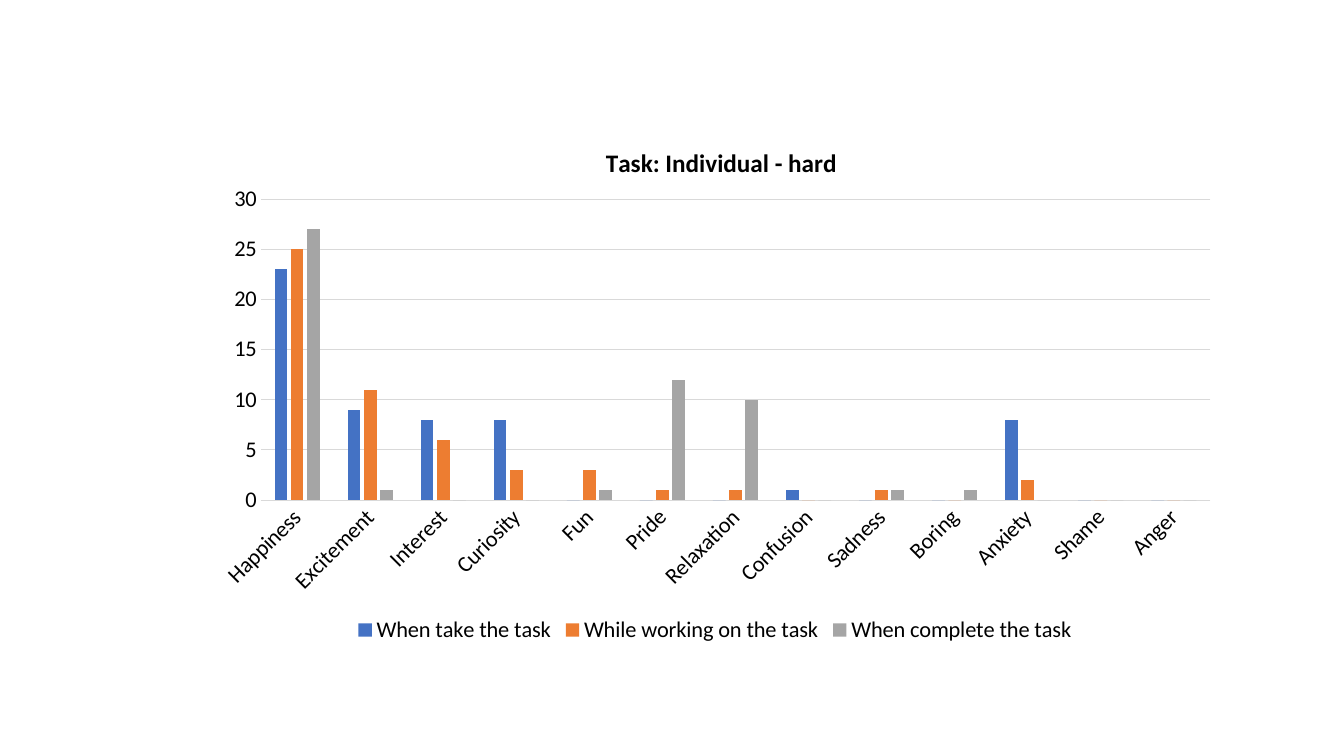
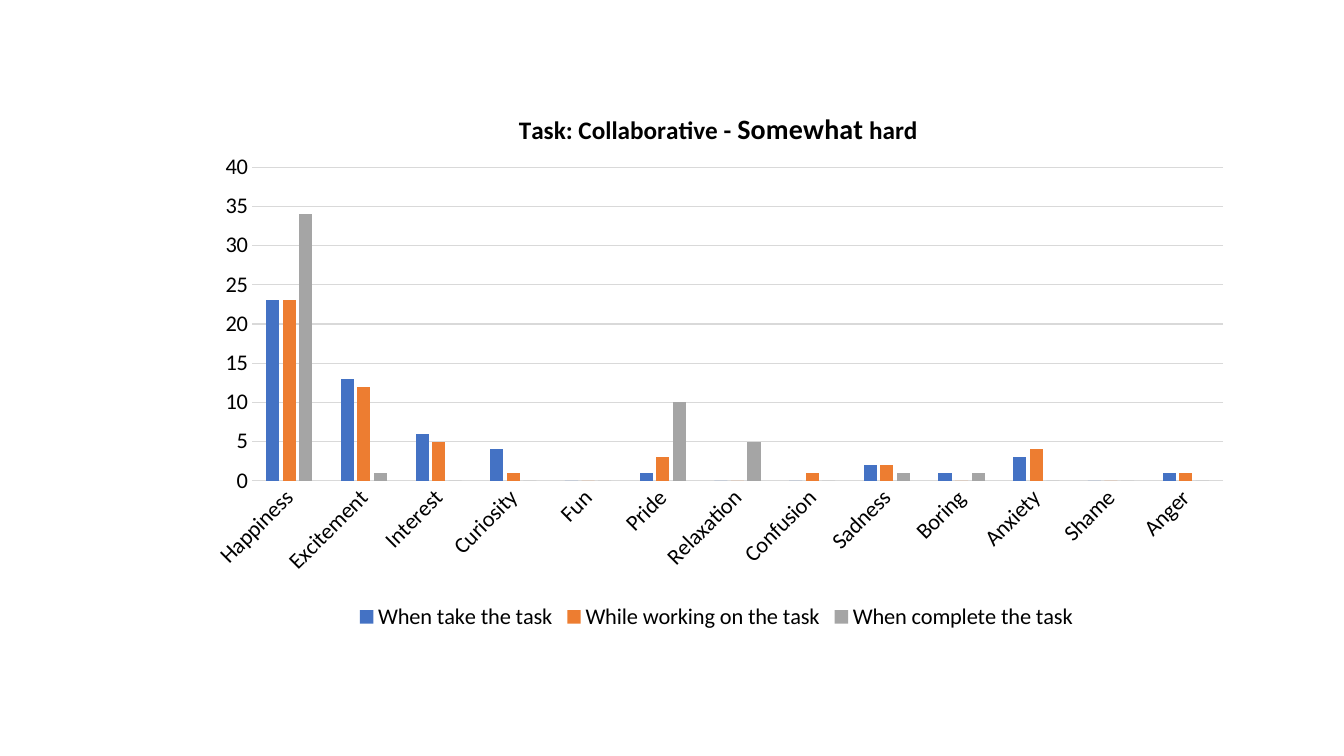
"""Build two column-chart slides on emotions felt during tasks."""
from lxml import etree
from pptx import Presentation
from pptx.chart.data import CategoryChartData
from pptx.dml.color import RGBColor
from pptx.enum.chart import XL_CHART_TYPE, XL_LEGEND_POSITION, XL_TICK_MARK
from pptx.oxml.ns import qn
from pptx.util import Inches, Pt

COLUMN = XL_CHART_TYPE.COLUMN_CLUSTERED
BOTTOM = XL_LEGEND_POSITION.BOTTOM
NO_TICK = XL_TICK_MARK.NONE

WIDE, HIGH = 13.33, 7.5
FONT = "Calibri"
HUES = {"text": "000000", "rule": "D9D9D9", "start": "4472C4",
        "work": "ED7D31", "end": "A5A5A5"}
MOODS = ["Happiness", "Excitement", "Interest", "Curiosity", "Fun", "Pride",
         "Relaxation", "Confusion", "Sadness", "Boring", "Anxiety", "Shame",
         "Anger"]
STAGES = {"start": "When take the task", "work": "While working on the task",
          "end": "When complete the task"}
PLOT = {"x": 0.06, "y": 0.15, "w": 0.92, "h": 0.57}

SLIDES = [
    {"title": [("Task: Individual - hard", 18)], "left": 0.39, "top": 30,
     "box": (1.97, 1.19, 10.24, 5.24),
     "vals": {"start": [23, 9, 8, 8, 0, 0, 0, 1, 0, 0, 8, 0, 0],
              "work": [25, 11, 6, 3, 3, 1, 1, 0, 1, 0, 2, 0, 0],
              "end": [27, 1, 0, 0, 1, 12, 10, 0, 1, 1, 0, 0, 0]}},
    {"title": [("Task: Collaborative - ", 18), ("Somewhat", 20), (" hard", 18)],
     "left": 0.31, "top": 40, "box": (1.87, 0.84, 10.47, 5.46),
     "vals": {"start": [23, 13, 6, 4, 0, 1, 0, 0, 2, 1, 3, 0, 1],
              "work": [23, 12, 5, 1, 0, 3, 0, 1, 2, 0, 4, 0, 1],
              "end": [34, 1, 0, 0, 0, 10, 5, 0, 1, 1, 0, 0, 0]}},
]


def hue(key):
    """Return the named colour."""
    return RGBColor.from_string(HUES[key])


def style(font, size, bold=False):
    """Set the shared face and colour at a given size."""
    font.name, font.size, font.bold = FONT, Pt(size), bold
    font.color.rgb = hue("text")


def rule(line):
    """Draw a thin grey line."""
    line.color.rgb = hue("rule")
    line.width = Pt(0.75)


def place(host, index, spots, inner=False):
    """Give a chart part a fixed layout in shares of the chart."""
    for old in host.findall(qn("c:layout")):
        host.remove(old)
    layout = etree.Element(qn("c:layout"))
    manual = etree.SubElement(layout, qn("c:manualLayout"))
    marks = [("layoutTarget", "inner")] if inner else []
    marks += [(key + "Mode", "edge") for key in "xy"]
    marks += list(spots.items())
    for tag, val in marks:
        etree.SubElement(manual, qn("c:" + tag)).set("val", str(val))
    host.insert(index, layout)


def add_title(chart, parts, left):
    """Write the chart title from sized runs."""
    para = chart.chart_title.text_frame.paragraphs[0]
    for text, size in parts:
        run = para.add_run()
        run.text = text
        style(run.font, size, True)
    chart.chart_title.include_in_layout = False
    place(chart.element.xpath("c:chart/c:title")[0], 1, {"x": left, "y": 0.04})


def set_axes(chart, top):
    """Format both axes and the grid."""
    cat, val = chart.category_axis, chart.value_axis
    for axis in (cat, val):
        axis.major_tick_mark = axis.minor_tick_mark = NO_TICK
        style(axis.tick_labels.font, 16)
    rule(cat.format.line)
    chart.element.xpath(".//c:catAx/c:txPr/a:bodyPr")[0].set("rot", "-2700000")
    val.format.line.fill.background()
    val.minimum_scale, val.maximum_scale, val.major_unit = 0, top, 5
    rule(val.major_gridlines.format.line)


def add_chart(slide, spec):
    """Add one clustered column chart."""
    data = CategoryChartData()
    data.categories = MOODS
    for key, name in STAGES.items():
        data.add_series(name, spec["vals"][key])
    box = [Inches(num) for num in spec["box"]]
    chart = slide.shapes.add_chart(COLUMN, *box, data).chart
    style(chart.font, 16)
    add_title(chart, spec["title"], spec["left"])
    set_axes(chart, spec["top"])
    plot = chart.plots[0]
    plot.gap_width, plot.overlap, plot.vary_by_categories = 219, -27, False
    for key, bars in zip(STAGES, plot.series):
        bars.format.fill.solid()
        bars.format.fill.fore_color.rgb = hue(key)
    chart.has_legend = True
    chart.legend.position = BOTTOM
    chart.legend.include_in_layout = False
    style(chart.legend.font, 16)
    place(chart.element.xpath("c:chart/c:plotArea")[0], 0, PLOT, True)


def main():
    """Build and save the deck."""
    deck = Presentation()
    deck.slide_width, deck.slide_height = Inches(WIDE), Inches(HIGH)
    for spec in SLIDES:
        add_chart(deck.slides.add_slide(deck.slide_layouts[6]), spec)
    deck.save("out.pptx")


if __name__ == "__main__":
    main()
